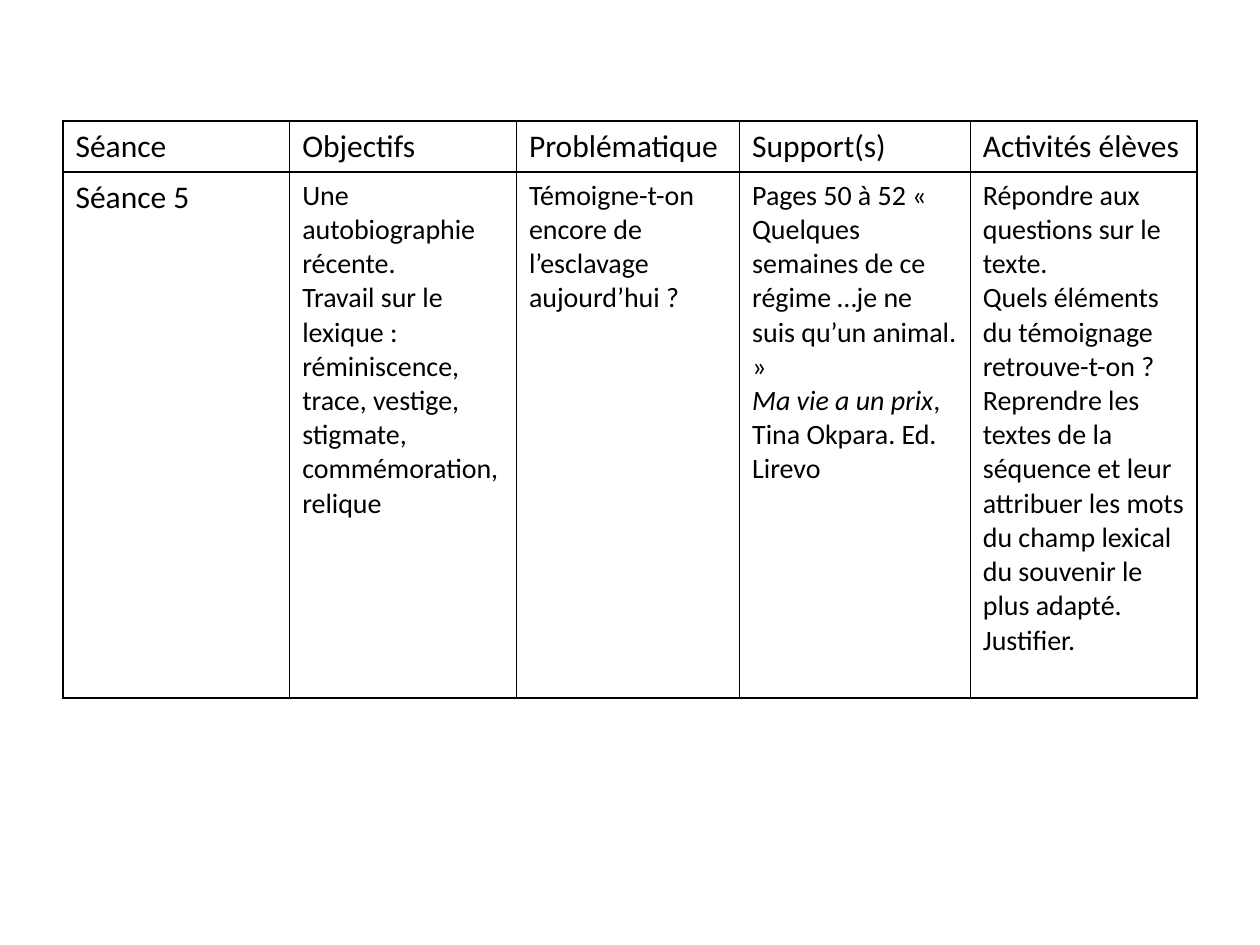
from dataclasses import dataclass

from lxml import etree
from pptx import Presentation
from pptx.dml.color import RGBColor
from pptx.oxml.ns import qn
from pptx.util import Cm, Pt


@dataclass(frozen=True)
class Theme:
    font: str = "Calibri"
    ink: str = "000000"
    heading_size: int = 18
    body_size: int = 16
    border_width: int = 1


theme = Theme()


def add_borders(cell):
    properties = cell._tc.get_or_add_tcPr()
    for position, side in enumerate(("a:lnL", "a:lnR", "a:lnT", "a:lnB")):
        line = etree.Element(qn(side), w=str(Pt(theme.border_width)))
        fill = etree.SubElement(line, qn("a:solidFill"))
        etree.SubElement(fill, qn("a:srgbClr"), val=theme.ink)
        properties.insert(position, line)


column_widths = [4.57, 4.57, 4.5, 4.65, 4.57]
row_heights = [1.03, 10.6]
headings = ["Séance", "Objectifs", "Problématique", "Support(s)", "Activités élèves"]
session = [
    "Séance 5",
    "Une autobiographie récente.\n"
    "Travail sur le lexique : réminiscence, trace, vestige, stigmate, commémoration, relique",
    "Témoigne-t-on encore de l’esclavage aujourd’hui ?",
    "Pages 50 à 52 « Quelques semaines de ce régime …je ne suis qu’un animal. »\n"
    "Ma vie a un prix",
    "Répondre aux questions sur le texte.\n"
    "Quels éléments du témoignage retrouve-t-on ?\n"
    "Reprendre les textes de la séquence et leur attribuer les mots du champ lexical "
    "du souvenir le plus adapté. Justifier.",
]
rows = [headings, session]

presentation = Presentation()
presentation.slide_width = Cm(25.4)
presentation.slide_height = Cm(19.05)
slide = presentation.slides.add_slide(presentation.slide_layouts[6])

table = slide.shapes.add_table(
    len(rows), len(headings), Cm(1.27), Cm(2.44),
    Cm(sum(column_widths)), Cm(sum(row_heights)),
).table
table.first_row = False
table.horz_banding = False
for column, width in zip(table.columns, column_widths):
    column.width = Cm(width)
for row, height in zip(table.rows, row_heights):
    row.height = Cm(height)

for row_index, texts in enumerate(rows):
    for column_index, text in enumerate(texts):
        table.cell(row_index, column_index).text_frame.text = text

book_reference = table.cell(1, 3).text_frame.paragraphs[-1]
book_reference.runs[0].font.italic = True
book_reference.add_run().text = ", Tina Okpara. Ed. Lirevo"

for row_index, texts in enumerate(rows):
    for column_index in range(len(texts)):
        cell = table.cell(row_index, column_index)
        cell.fill.background()
        add_borders(cell)
        is_heading = row_index == 0 or column_index == 0
        for paragraph in cell.text_frame.paragraphs:
            for run in paragraph.runs:
                run.font.name = theme.font
                run.font.size = Pt(theme.heading_size if is_heading else theme.body_size)
                run.font.color.rgb = RGBColor.from_string(theme.ink)

presentation.save("out.pptx")
